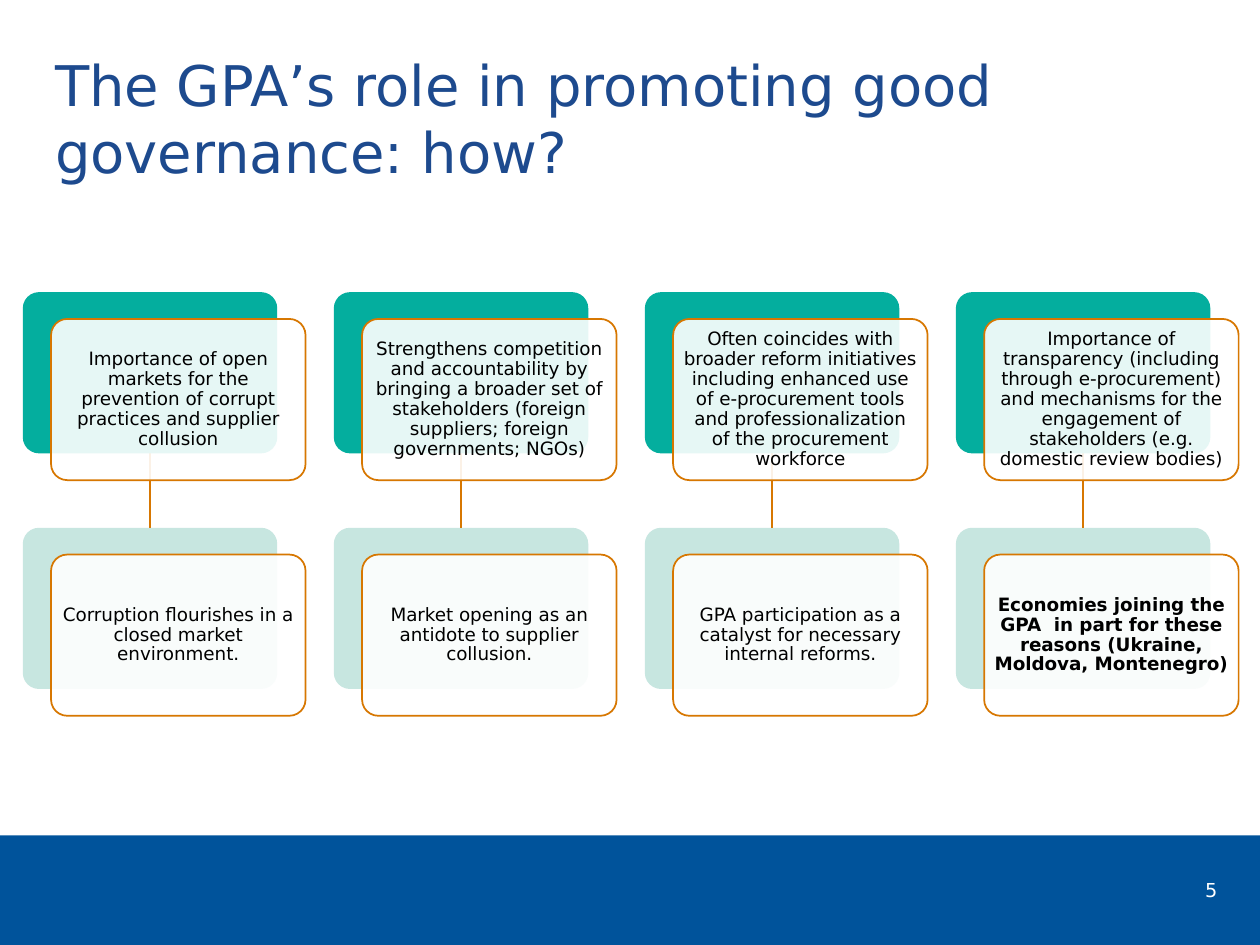
import pptx
import pptx.dml.color
import pptx.enum.shapes
import pptx.enum.text
import pptx.oxml.ns
import pptx.util
from lxml import etree

Cm = pptx.util.Cm
Pt = pptx.util.Pt
SHAPES = pptx.enum.shapes.MSO_SHAPE
ALIGN = pptx.enum.text.PP_ALIGN
ANCHOR = pptx.enum.text.MSO_ANCHOR

FONT = "DejaVu Sans"
COLOURS = {
    "title": "1D4A8E", "footer": "00539B", "text": "000000", "white": "FFFFFF",
    "teal": "04AE9E", "mint": "84C8BC", "orange": "D77701",
}

# Each column: the principle above, its consequence below, and whether that is bold
COLUMNS = [
    ("Importance of open markets for the prevention of corrupt practices and supplier collusion",
     "Corruption flourishes in a closed market environment.", False),
    ("Strengthens competition and accountability by bringing a broader set of stakeholders "
     "(foreign suppliers; foreign governments; NGOs)",
     "Market opening as an antidote to supplier collusion.", False),
    ("Often coincides with broader reform initiatives including enhanced use of e-procurement "
     "tools and professionalization of the procurement workforce",
     "GPA participation as a catalyst for necessary internal reforms.", False),
    ("Importance of transparency (including through e-procurement) and mechanisms for the "
     "engagement of stakeholders (e.g. domestic review bodies)",
     "Economies joining the GPA  in part for these reasons (Ukraine, Moldova, Montenegro)", True),
]

# Lengths in centimetres
CARD_WIDTH, CARD_HEIGHT = 5.13, 3.25
SHIFT_X, SHIFT_Y = 0.57, 0.54
COLUMN_PITCH, ROW_PITCH = 6.27, 4.75
CAPTION_MARGIN = 0.09


def colour(name):
    return pptx.dml.color.RGBColor.from_string(COLOURS[name])


def add_block(page, kind, left, top, width, height, fill, opacity=100, line=None):
    """Add a flat filled shape, optionally see-through and outlined."""
    block = page.shapes.add_shape(kind, Cm(left), Cm(top), Cm(width), Cm(height))
    block.shadow.inherit = False
    block.fill.solid()
    block.fill.fore_color.rgb = colour(fill)
    if opacity < 100:
        tint = block.fill._xPr.find(".//" + pptx.oxml.ns.qn("a:srgbClr"))
        etree.SubElement(tint, pptx.oxml.ns.qn("a:alpha"), val=str(opacity * 1000))
    if line:
        block.line.color.rgb = colour(line)
        block.line.width = Pt(1)
    else:
        block.line.fill.background()
    return block


def add_text(page, left, top, width, height, text, size, ink, align=ALIGN.LEFT, bold=False):
    """Add a wrapping text box with one paragraph and return it."""
    box = page.shapes.add_textbox(Cm(left), Cm(top), Cm(width), Cm(height))
    box.text_frame.word_wrap = True
    para = box.text_frame.paragraphs[0]
    para.alignment = align
    span = para.add_run()
    span.text = text
    span.font.name = FONT
    span.font.size = Pt(size)
    span.font.bold = bold
    span.font.color.rgb = colour(ink)
    return box


def add_card(page, left, top, text, fill, opacity, bold=False):
    """Add a coloured back plate with an outlined caption card shifted over it."""
    front_left, front_top = left + SHIFT_X, top + SHIFT_Y
    plates = [
        add_block(page, SHAPES.ROUNDED_RECTANGLE, left, top, CARD_WIDTH, CARD_HEIGHT,
                  fill, opacity),
        add_block(page, SHAPES.ROUNDED_RECTANGLE, front_left, front_top, CARD_WIDTH, CARD_HEIGHT,
                  "white", 90, "orange"),
    ]
    for plate in plates:
        plate.adjustments[0] = 0.1
    caption = add_text(page, front_left + CAPTION_MARGIN, front_top + CAPTION_MARGIN,
                       CARD_WIDTH - 2 * CAPTION_MARGIN, CARD_HEIGHT - 2 * CAPTION_MARGIN,
                       text, 10.5, "text", ALIGN.CENTER, bold)
    frame = caption.text_frame
    frame.vertical_anchor = ANCHOR.MIDDLE
    frame.margin_left = frame.margin_right = Cm(0.11)
    frame.margin_top = frame.margin_bottom = Cm(0.11)
    frame.paragraphs[0].line_spacing = 0.9


def add_link(page, left, top):
    """Add the vertical line from an upper back plate to the lower one."""
    middle = left + CARD_WIDTH / 2
    link = page.shapes.add_connector(pptx.enum.shapes.MSO_CONNECTOR.STRAIGHT,
                                     Cm(middle), Cm(top + CARD_HEIGHT),
                                     Cm(middle), Cm(top + ROW_PITCH))
    link.line.color.rgb = colour("orange")
    link.line.width = Pt(1)
    etree.SubElement(link._element.spPr, pptx.oxml.ns.qn("a:effectLst"))


def add_columns(page, left, top):
    """Add the four linked pairs of cards, with the links behind the cards."""
    lefts = [left + index * COLUMN_PITCH for index in range(len(COLUMNS))]
    for column_left in lefts:
        add_link(page, column_left, top)
    for column_left, (principle, consequence, bold) in zip(lefts, COLUMNS):
        add_card(page, column_left, top, principle, "teal", 100)
        add_card(page, column_left, top + ROW_PITCH, consequence, "mint", 45, bold)


def add_footer(page, left, top, width, height):
    """Add the blue band with the page number."""
    add_block(page, SHAPES.RECTANGLE, left, top, width, height, "footer")
    add_text(page, left + 19.51, top + 0.74, 5.28, 0.74, "5", 11, "white", ALIGN.RIGHT)


def main():
    deck = pptx.Presentation()
    deck.slide_width, deck.slide_height = Cm(25.4), Cm(19.05)
    page = deck.slides.add_slide(deck.slide_layouts[6])

    add_footer(page, 0, 16.84, 25.4, 2.21)
    add_columns(page, 0.46, 5.89)
    # Title
    add_text(page, 0.86, 0.89, 21.87, 1.57,
             "The GPA’s role in promoting good governance: how?", 32, "title")

    deck.save("out.pptx")


if __name__ == "__main__":
    main()
